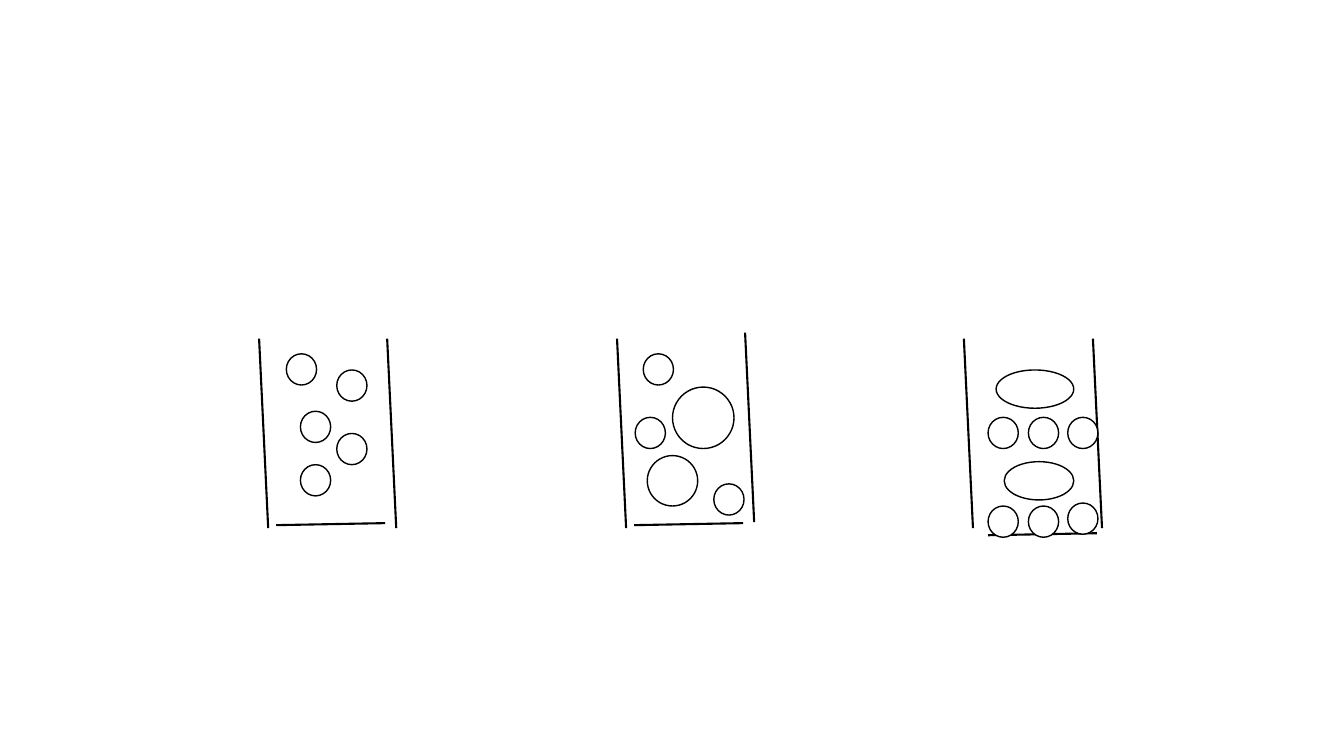
from lxml import etree
from pptx import Presentation
from pptx.dml.color import RGBColor
from pptx.enum.shapes import MSO_CONNECTOR, MSO_SHAPE
from pptx.oxml.ns import qn
from pptx.util import Pt

STRAIGHT = MSO_CONNECTOR.STRAIGHT
OVAL = MSO_SHAPE.OVAL
PX = 9144  # 100 px to the inch
BLACK = "000000"
WHITE = "FFFFFF"
BLANK_LAYOUT = 6


def color(hex_string):
    return RGBColor.from_string(hex_string)


presentation = Presentation()
presentation.slide_width = 1333 * PX
presentation.slide_height = 750 * PX
slide = presentation.slides.add_slide(presentation.slide_layouts[BLANK_LAYOUT])

# Beaker walls (left, top) and bases (left, top) share one slant each
WALL_RUN, WALL_DROP = 9, 188
BASE_RUN, BASE_DROP = 108, -2
walls = [(257, 336), (384, 336), (612, 336), (739, 330), (956, 336), (1084, 336)]
bases = [(274, 521), (980, 531), (629, 521)]

for starts, run, drop in ((walls, WALL_RUN, WALL_DROP), (bases, BASE_RUN, BASE_DROP)):
    for left, top in starts:
        ends = (left, top, left + run, top + drop)
        edge = slide.shapes.add_connector(STRAIGHT, *(value * PX for value in ends))
        edge.line.color.rgb = color(BLACK)
        edge.line.width = Pt(1.5)
        etree.SubElement(edge._element.spPr, qn("a:effectLst"))

# Particles grouped by size: (width, height) and their (left, top) positions
ATOM = (30, 31)
compound_columns = (980, 1020, 1059)
particles = [
    (ATOM, [(298, 461), (334, 430), (298, 408), (334, 367), (284, 351)]),
    ((50, 50), [(642, 452)]),
    (ATOM, [(708, 480), (630, 414)]),
    ((61, 61), [(667, 384)]),
    (ATOM, [(638, 351)]),
    (ATOM, list(zip(compound_columns, (502, 502, 499)))),
    (ATOM, [(left, 414) for left in reversed(compound_columns)]),
    ((77, 38), [(988, 367)]),
    ((69, 38), [(996, 458)]),
]

for (width, height), positions in particles:
    for left, top in positions:
        particle = slide.shapes.add_shape(OVAL, left * PX, top * PX, width * PX, height * PX)
        particle.shadow.inherit = False
        particle.fill.solid()
        particle.fill.fore_color.rgb = color(WHITE)
        particle.line.color.rgb = color(BLACK)
        particle.line.width = Pt(1)

presentation.save("out.pptx")
